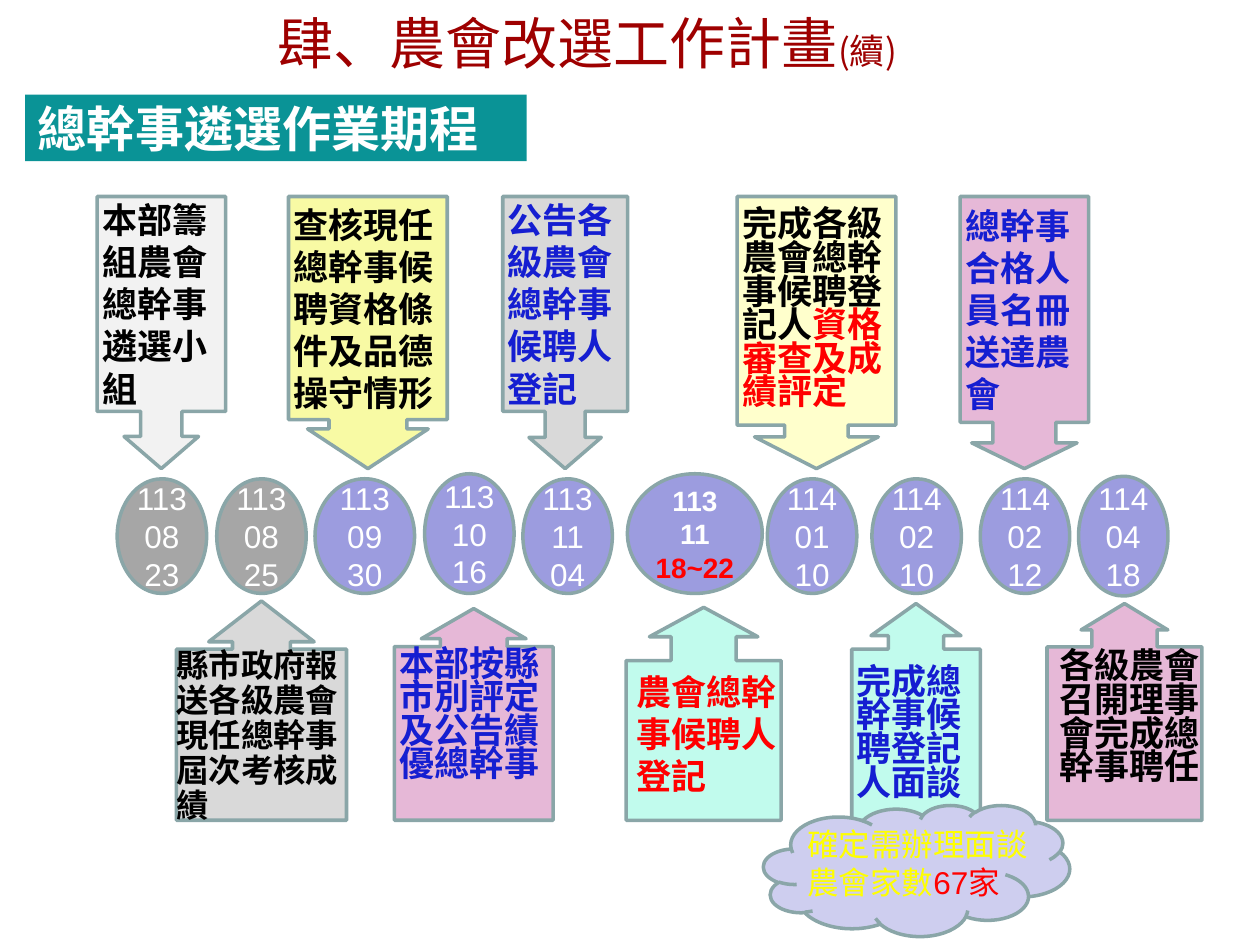
from lxml import etree
from pptx import Presentation
from pptx.dml.color import RGBColor
from pptx.enum.shapes import MSO_SHAPE
from pptx.enum.text import MSO_ANCHOR, MSO_AUTO_SIZE, PP_ALIGN
from pptx.oxml.ns import qn
from pptx.util import Inches, Pt

OVAL, CLOUD = MSO_SHAPE.OVAL, MSO_SHAPE.CLOUD
DOWN, UP = MSO_SHAPE.DOWN_ARROW_CALLOUT, MSO_SHAPE.UP_ARROW_CALLOUT
TOP, MID = MSO_ANCHOR.TOP, MSO_ANCHOR.MIDDLE
LEFT, MIDDLE = PP_ALIGN.LEFT, PP_ALIGN.CENTER
FIXED = MSO_AUTO_SIZE.NONE

HUE = {
    "white": "FFFFFF", "black": "000000", "red": "FF0000", "blue": "151ED1",
    "sun": "FFFF00", "wine": "9E0000", "teal": "0A9396", "edge": "8AA6A8",
    "gray": "A6A6A6", "violet": "9C9CDF", "pale": "F2F2F2", "silver": "D9D9D9",
    "lemon": "F8FAA4", "cream": "FFFFCC", "pink": "E6B8D7", "mint": "C1FBED",
    "cloud": "CECEEF",
}
SANS, CJK, DEJA = "Arial", "Noto Sans CJK SC", "DejaVu Sans"
EVEN = (0.04,) * 4
PLAIN = (0.1, 0.05, 0.1, 0.05)

DATES = [
    (0.93, 3.8, 0.71, 0.91, "gray", "113 08 23"),
    (1.72, 3.8, 0.71, 0.91, "gray", "113 08 25"),
    (2.5, 3.8, 0.79, 0.91, "violet", "113 09 30"),
    (3.37, 3.76, 0.71, 0.95, "violet", "113 10 16"),
    (4.15, 3.8, 0.71, 0.91, "violet", "113 11 04"),
    (4.98, 3.76, 1.07, 0.95, "violet", "113 11 18~22"),
    (6.09, 3.8, 0.71, 0.91, "violet", "114 01 10"),
    (6.92, 3.8, 0.71, 0.91, "violet", "114 02 10"),
    (7.78, 3.8, 0.71, 0.91, "violet", "114 02 12"),
    (8.56, 3.78, 0.71, 0.95, "violet", "114 04 18"),
]

ABOVE = [
    (0.77, 1.02, "pale", (0.32, 0.29, 0.25, 0.79), 1, SANS,
     [("本部籌組農會總幹事遴選小組", "black")]),
    (2.29, 1.26, "lemon", (0.49, 0.38, 0.25, 0.82), 1, SANS,
     [("查核現任總幹事候聘資格條件及品德操守情形", "black")]),
    (3.99, 0.99, "silver", (0.32, 0.29, 0.25, 0.79), 1, DEJA,
     [("公告各級農會總幹事候聘人登記", "blue")]),
    (5.85, 1.26, "cream", (0.4, 0.39, 0.2, 0.84), 0.8, SANS,
     [("完成各級農會總幹事候聘登記人", "black"), ("資格審查及成績評定", "red")]),
    (7.62, 1.02, "pink", (0.49, 0.41, 0.2, 0.83), 1, SANS,
     [("總幹事合格人員名冊送達農會", "blue")]),
]

BELOW = [
    (1.4, 4.77, 1.35, "silver", (0.34, 0.31, 0.24, 0.78), 0.9, SANS, 18.5,
     TOP, (0, 0, 0, 0), "縣市政府報送各級農會現任總幹事屆次考核成績", "black"),
    (3.13, 4.83, 1.26, "pink", (0.42, 0.33, 0.19, 0.82), 0.8, SANS, 20,
     MID, (0.04, 0.04, 0.04, 0.31), "本部按縣市別評定及公告績優總幹事", "blue"),
    (4.97, 4.82, 1.23, "mint", (0.42, 0.35, 0.19, 0.75), 1, CJK, 20,
     TOP, (0.08, 0.08, 0, 0.08), "農會總幹事候聘人登記", "red"),
    (6.76, 4.79, 1.02, "mint", (0.43, 0.35, 0.25, 0.79), 0.8, SANS, 20,
     MID, EVEN, "完成總幹事候聘登記人面談", "blue"),
    (8.31, 4.79, 1.23, "pink", (0.42, 0.28, 0.17, 0.8), 0.8, SANS, 20,
     TOP, (0.1, 0.04, 0, 0.04), "各級農會召開理事會完成總幹事聘任", "black"),
]
FOOT = 6.51


def tint(name):
    return RGBColor.from_string(HUE[name])


def write(shape, paras, font, bold=False, align=LEFT, anchor=MID,
          pad=EVEN, gap=1):
    frame = shape.text_frame
    frame.word_wrap = True
    frame.auto_size = FIXED
    frame.vertical_anchor = anchor
    (frame.margin_left, frame.margin_top,
     frame.margin_right, frame.margin_bottom) = map(Inches, pad)
    for i, runs in enumerate(paras):
        para = frame.add_paragraph() if i else frame.paragraphs[0]
        para.alignment = align
        para.line_spacing = gap
        for text, hue, size in runs:
            run = para.add_run()
            run.text = text
            run.font.size = Pt(size)
            run.font.bold = bold
            run.font.color.rgb = tint(hue)
            run.font.name = font
            east = etree.SubElement(run.font._element, qn("a:ea"))
            east.set("typeface", CJK)


def draw(kind, box, fill, adj=()):
    shape = slide.shapes.add_shape(kind, *map(Inches, box))
    shape.shadow.inherit = False
    shape.fill.solid()
    shape.fill.fore_color.rgb = tint(fill)
    shape.line.color.rgb = tint("edge")
    shape.line.width = Pt(2)
    for i, part in enumerate(adj):
        shape.adjustments[i] = part
    return shape


def label(box, runs, font, align=LEFT):
    shape = slide.shapes.add_textbox(*map(Inches, box))
    write(shape, [runs], font, align=align, anchor=TOP, pad=PLAIN)


deck = Presentation()
deck.slide_width, deck.slide_height = Inches(10), Inches(7.5)
slide = deck.slides.add_slide(deck.slide_layouts[5])

title = slide.shapes.title
title.left, title.top, title.width, title.height = map(
    Inches, (0.2, 0.75, 3.98, 0.53))
title.fill.solid()
title.fill.fore_color.rgb = tint("teal")
write(title, [[("總幹事遴選作業期程", "white", 28)]], CJK, bold=True, pad=PLAIN)

for *box, fill, date in DATES:
    wide = "~" in date
    paras = [[(part, "red" if "~" in part else "white", 16 if wide else 18)]
             for part in date.split()]
    write(draw(OVAL, box, fill), paras, SANS, bold=wide, align=MIDDLE,
          pad=(0.02, 0.01, 0.02, 0.01))

for x, w, fill, adj, gap, font, runs in ABOVE:
    shape = draw(DOWN, (x, 1.56, w, 2.16), fill, adj)
    write(shape, [[(text, hue, 20) for text, hue in runs]], font,
          bold=True, gap=gap)

for x, y, w, fill, adj, gap, font, size, anchor, pad, text, hue in BELOW:
    shape = draw(UP, (x, y, w, FOOT - y), fill, adj)
    write(shape, [[(text, hue, size)]], font, bold=True, anchor=anchor,
          pad=pad, gap=gap)

draw(CLOUD, (6.06, 6.39, 2.43, 1.04), "cloud")
label((6.31, 6.5, 1.99, 0.71),
      [("確定需辦理面談農會家數", "sun", 18), ("67家", "red", 18)], SANS)
label((0.29, 0.02, 8.74, 0.57),
      [("肆、農會改選工作計畫", "wine", 32), ("(續)", "wine", 20)], CJK, MIDDLE)

deck.save("out.pptx")
